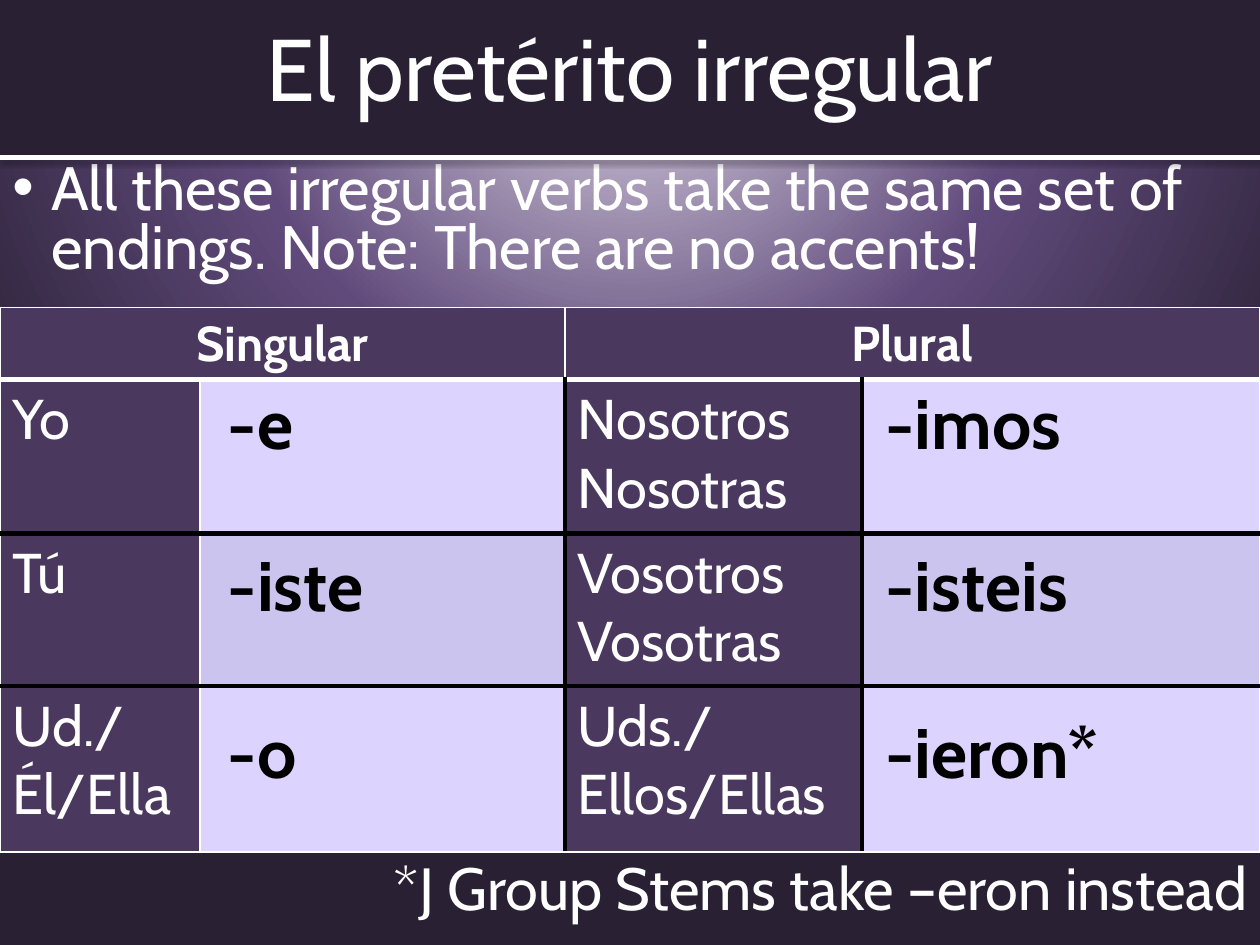
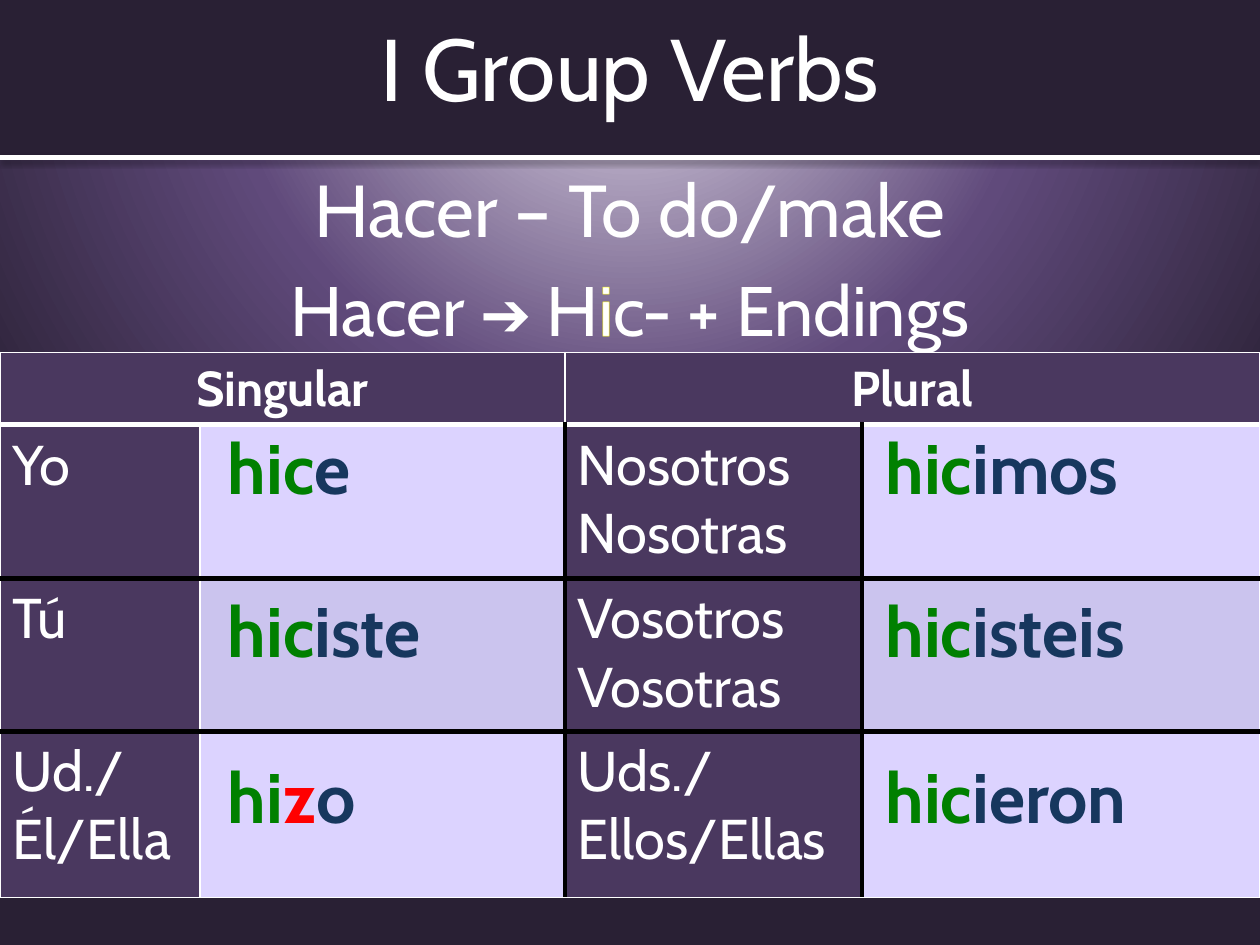
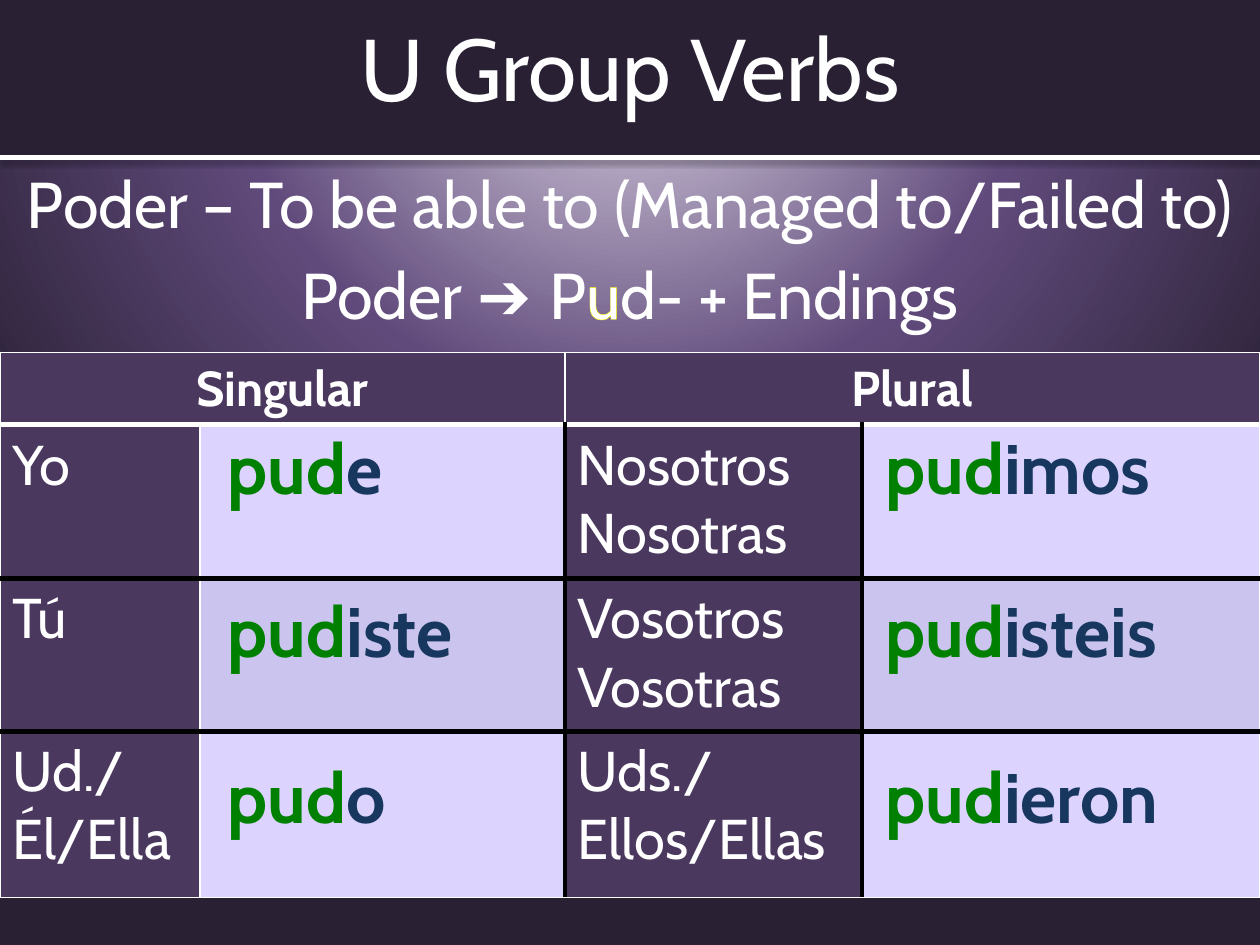
import pptx
import pptx.util
import pptx.dml.color
import pptx.enum.shapes
import pptx.enum.text
import pptx.oxml
import pptx.oxml.ns
from pptx.util import Cm

INK = {
    "dark": "292034", "mid": "604A7B", "pale": "E6E0EC",
    "head": "4A385F", "odd": "DCD3FF", "even": "CBC4EE",
    "white": "FFFFFF", "black": "000000", "stem": "008000",
    "end": "17375E", "red": "FF0000", "glow": "FFFF00",
}
FONT = "Cabin"
WIDE = 25.4
BAND = 3.18
COLS = [4.03, 7.36, 5.99, 8.02]
ROWS = [1.45, 3.1, 3.08, 3.35]
NAMES = [
    (["Yo"], ["Nosotros", "Nosotras"]),
    (["Tú"], ["Vosotros", "Vosotras"]),
    (["Ud./Él/Ella"], ["Uds./Ellos/Ellas"]),
]
LEFTS = [4.34, 17.6]
DROPS = [1.37, 4.65, 8]
SPANS = [[6.25, 7.16], [5.94, 6.4], [6.25, 6.1]]
ENDS = [["e", "imos"], ["iste", "isteis"], ["o", "ieron"]]
PLAIN = "{2D5ABB26-0587-4C30-8999-92F81FD0307C}"
ALIGN = pptx.enum.text.PP_ALIGN


def tint(name):
    return pptx.dml.color.RGBColor.from_string(INK[name])


def node(tag, inner="", **attrs):
    names = pptx.oxml.ns.nsdecls("a")
    pairs = " ".join(f'{key}="{val}"' for key, val in attrs.items())
    return pptx.oxml.parse_xml(f"<a:{tag} {names} {pairs}>{inner}</a:{tag}>")


def paint(name, inner=""):
    return f'<a:solidFill><a:srgbClr val="{INK[name]}">{inner}</a:srgbClr></a:solidFill>'


def put(frame, lines, size=32, ink="white", bold=False, align=None, gap=None, lead=None, dot=None):
    frame.word_wrap = True
    for i, line in enumerate(lines):
        para = frame.add_paragraph() if i else frame.paragraphs[0]
        para.alignment = align
        para.line_spacing = lead
        props = para._p.get_or_add_pPr()
        if gap:
            props.append(node("spcBef", f'<a:spcPct val="{gap * 1000}"/>'))
        if dot:
            props.set("marL", str(Cm(0.79)))
            props.set("indent", str(-Cm(0.79)))
            props.append(node("buFont", typeface="Arial"))
            props.append(node("buChar", char=dot))
        for part in [(line, {})] if isinstance(line, str) else line:
            words, look = part
            run = para.add_run()
            run.text = words
            font = run.font
            font.size = pptx.util.Pt(look.get("size", size))
            font.name = look.get("font", FONT)
            font.bold = bold
            font.color.rgb = tint(look.get("ink", ink))
            if "edge" in look:
                font._element.insert(0, node("ln", paint(look["edge"]), w=9525))


class Deck:
    def __init__(self):
        self.prs = pptx.Presentation()
        self.prs.slide_width = Cm(WIDE)
        self.prs.slide_height = Cm(19.05)
        self.slide = None
        self.glow()

    def glow(self):
        master = self.prs.slide_master
        master.background.fill.gradient()
        old = master.element.find(".//" + pptx.oxml.ns.qn("a:gradFill"))
        stops = "".join(
            f'<a:gs pos="{pos * 1000}"><a:srgbClr val="{INK[name]}"/></a:gs>'
            for pos, name in [(0, "pale"), (52, "mid"), (100, "dark")])
        rest = '<a:path path="circle"><a:fillToRect l="50000" t="-80000" r="50000" b="180000"/></a:path>'
        old.getparent().replace(old, node("gradFill", f"<a:gsLst>{stops}</a:gsLst>{rest}", rotWithShape=1))

    def start(self, title, lines, **look):
        self.slide = self.prs.slides.add_slide(self.prs.slide_layouts[6])
        self.band()
        self.text(lines, 0, BAND, WIDE, 13.2, **look)
        self.rule()
        box = self.text([title], 0, 0, WIDE, 2.7, size=50, align=ALIGN.CENTER)
        box.vertical_anchor = pptx.enum.text.MSO_ANCHOR.MIDDLE

    def band(self):
        kind = pptx.enum.shapes.MSO_SHAPE.RECTANGLE
        shape = self.slide.shapes.add_shape(kind, 0, 0, Cm(WIDE), Cm(BAND))
        shape.shadow.inherit = False
        shape.fill.solid()
        shape.fill.fore_color.rgb = tint("dark")
        shape.line.fill.background()

    def rule(self):
        kind = pptx.enum.shapes.MSO_CONNECTOR.STRAIGHT
        line = self.slide.shapes.add_connector(kind, 0, Cm(BAND), Cm(WIDE), Cm(BAND))
        line.line.color.rgb = tint("white")
        line.line.width = pptx.util.Pt(3)
        shade = f'<a:srgbClr val="{INK["black"]}"><a:alpha val="38000"/></a:srgbClr>'
        line._element.spPr.append(node(
            "effectLst",
            f'<a:outerShdw blurRad="40000" dist="20000" dir="5400000" rotWithShape="0">{shade}</a:outerShdw>'))

    def text(self, lines, x, y, w, h, **look):
        frame = self.slide.shapes.add_textbox(Cm(x), Cm(y), Cm(w), Cm(h)).text_frame
        put(frame, lines, **look)
        return frame

    def table(self, x, y, cols, rows):
        frame = self.slide.shapes.add_table(
            len(rows), len(cols), Cm(x), Cm(y), Cm(sum(cols)), Cm(sum(rows)))
        grid = frame.table
        grid.first_row = grid.horz_banding = False
        grid._tbl.tblPr.find(pptx.oxml.ns.qn("a:tableStyleId")).text = PLAIN
        for col, w in zip(grid.columns, cols):
            col.width = Cm(w)
        for row, h in zip(grid.rows, rows):
            row.height = Cm(h)
        return grid

    def cell(self, cell, fill, edges):
        props = cell._tc.get_or_add_tcPr()
        for side, (name, size) in zip("LRTB", edges):
            props.append(node(f"ln{side}", paint(name), w=size * 12700))
        cell.fill.solid()
        cell.fill.fore_color.rgb = tint(fill)

    def chart(self, top, forms):
        grid = self.table(0, top, COLS, ROWS)
        thin, thick, heavy = ("white", 1), ("white", 3), ("black", 3)
        for c, name in [(0, "Singular"), (2, "Plural")]:
            grid.cell(0, c).merge(grid.cell(0, c + 1))
            put(grid.cell(0, c).text_frame, [name], size=28, bold=True, align=ALIGN.CENTER)
        for c in range(4):
            self.cell(grid.cell(0, c), "head", [thin, thin, thin, thick])
        for r, pair in enumerate(NAMES, 1):
            for c in range(4):
                edges = [heavy if c > 1 else thin,
                         heavy if c in (1, 2) else thin,
                         heavy if r > 1 else thick,
                         heavy if r < 3 else thin]
                fill = "head" if c % 2 == 0 else "even" if r == 2 else "odd"
                self.cell(grid.cell(r, c), fill, edges)
            for c, names in zip((0, 2), pair):
                put(grid.cell(r, c).text_frame, names)
        for drop, spans, pair in zip(DROPS, SPANS, forms):
            for x, w, form in zip(LEFTS, spans, pair):
                spot = self.table(x, top + drop, [w], [1.96]).cell(0, 0)
                spot.fill.background()
                put(spot.text_frame, [form], size=40, ink="black", bold=True)


def verbs(stem):
    return [[[(stem, {"ink": "stem"}), (end, {"ink": "end"})] for end in pair] for pair in ENDS]


def main():
    deck = Deck()
    mid = {"align": ALIGN.CENTER, "gap": 20}

    deck.start("El pretérito irregular",
               ["All these irregular verbs take the same set of endings. Note: There are no accents!"],
               size=35, gap=20, lead=0.8, dot="•")
    ends = [["-" + end for end in pair] for pair in ENDS]
    ends[2][1] += "*"
    deck.chart(6.2, ends)
    deck.text(["*J Group Stems take –eron instead"], 3.4, 17.04, 22, 1.7, size=34, align=ALIGN.RIGHT)

    deck.start("I Group Verbs", [
        [("Hacer – To do/make", {"size": 42})],
        [("Hacer ", {}), ("➔", {"size": 35, "font": "Arial"}), (" ", {"size": 30, "font": "Arial"}),
         ("H", {}), ("i", {"edge": "glow"}), ("c- + Endings", {})],
    ], size=40, **mid)
    forms = verbs("hic")
    forms[2][0] = [("hi", {"ink": "stem"}), ("z", {"ink": "red"}), ("o", {"ink": "end"})]
    deck.chart(7.11, forms)

    deck.start("U Group Verbs", [
        "Poder – To be able to (Managed to/Failed to)",
        [("Poder ", {}), ("➔ ", {"font": "Arial"}),
         ("P", {}), ("u", {"edge": "glow"}), ("d- + Endings", {})],
    ], size=37, **mid)
    deck.chart(7.11, verbs("pud"))

    deck.prs.save("out.pptx")


if __name__ == "__main__":
    main()
